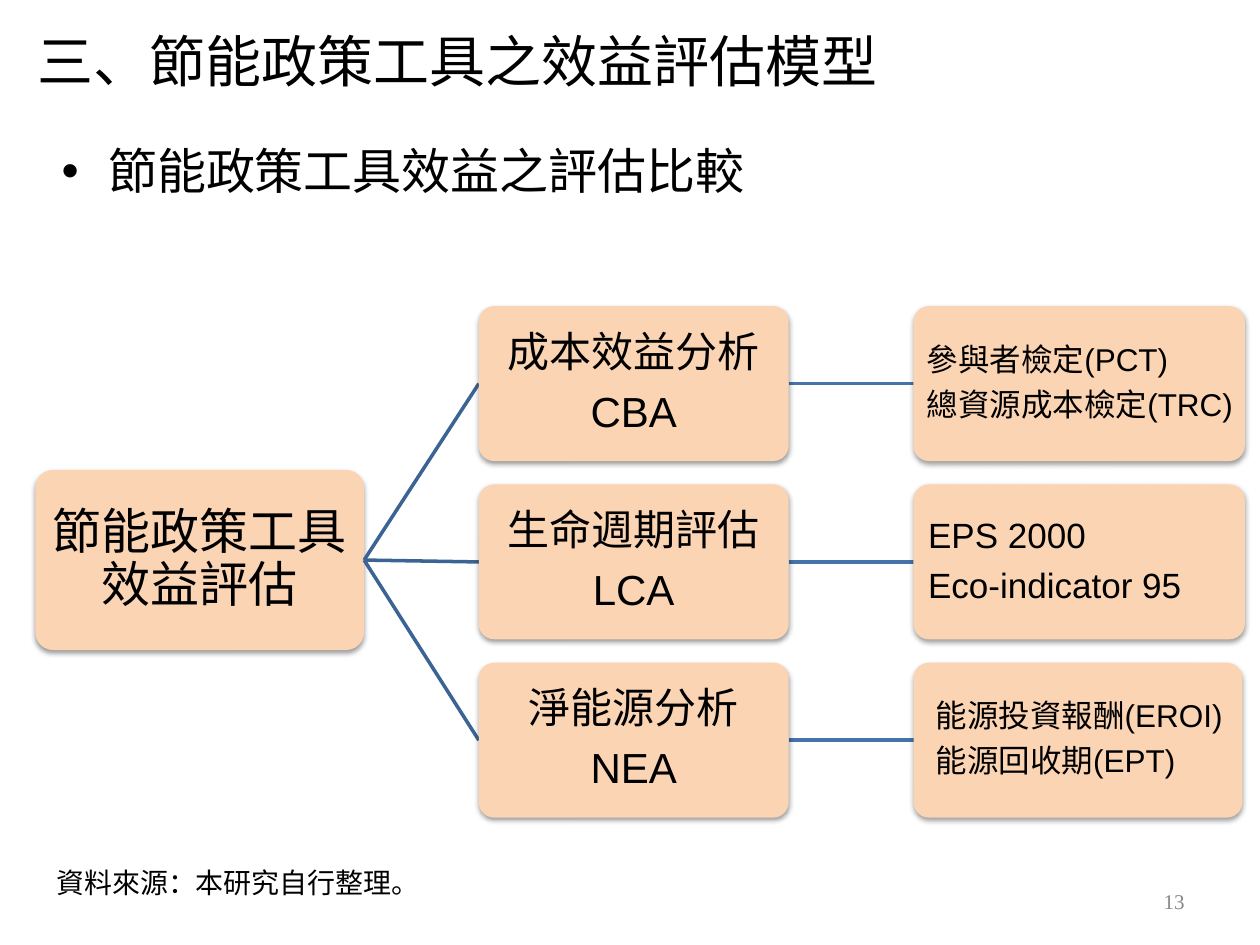
from lxml.etree import SubElement
from pptx import Presentation
from pptx.dml.color import RGBColor
from pptx.enum.shapes import MSO_CONNECTOR, MSO_SHAPE
from pptx.enum.text import MSO_ANCHOR, PP_ALIGN
from pptx.oxml.ns import qn
from pptx.util import Inches, Pt

BLACK = RGBColor(0, 0, 0)
GRAY = RGBColor(0x88, 0x88, 0x88)
PEACH = RGBColor(0xFB, 0xD4, 0xB4)
NAVY = RGBColor(0x3B, 0x64, 0x95)
BLUE = RGBColor(0x46, 0x74, 0xAA)

TITLE = "三、節能政策工具之效益評估模型"
POINT = "節能政策工具效益之評估比較"
ROOT = "節能政策工具效益評估"
SOURCE = "資料來源：本研究自行整理。"
NUMBER = "13"
# method lines, tool lines, tool text size, tool indent, tool box width
ROWS = [
    (["成本效益分析", "CBA"], ["參與者檢定(PCT)", "總資源成本檢定(TRC)"], 18, 0.07, 2.63),
    (["生命週期評估", "LCA"], ["EPS 2000", "Eco-indicator 95"], 20, 0.08, 2.63),
    (["淨能源分析", "NEA"], ["能源投資報酬(EROI)", "能源回收期(EPT)"], 18, 0.14, 2.61),
]
ROOT_BOX = (0.28, 3.73, 2.61, 1.43)
METHOD_X, METHOD_W, TOOL_X = 3.8, 2.46, 7.25
TOP, HIGH, STEP = 2.43, 1.23, 1.415

deck = Presentation()
deck.slide_width, deck.slide_height = Inches(10), Inches(7.5)
slide = deck.slides.add_slide(deck.slide_layouts[6])
shapes = slide.shapes


def write(shape, lines, size, face="Arial", color=BLACK, align=PP_ALIGN.LEFT,
          anchor=MSO_ANCHOR.MIDDLE, pad=(0.1, 0.05, 0.1, 0.05), tight=False, bullet=False):
    frame = shape.text_frame
    frame.word_wrap = True
    frame.vertical_anchor = anchor
    for side, gap in zip(("left", "top", "right", "bottom"), pad):
        setattr(frame, "margin_" + side, Inches(gap))
    frame.text = "\n".join(lines)
    for i, para in enumerate(frame.paragraphs):
        para.alignment = align
        if tight:
            para.line_spacing = 0.9
            if i:
                para.space_before = Pt(size * 0.35)
        if bullet:
            props = para._p.get_or_add_pPr()
            props.set("marL", str(Inches(0.37)))
            props.set("indent", str(-Inches(0.37)))
            SubElement(props, qn("a:buFont"), typeface="Arial")
            SubElement(props, qn("a:buChar"), char="•")
        for run in para.runs:
            for key, value in {"size": Pt(size), "name": face}.items():
                setattr(run.font, key, value)
            run.font.color.rgb = color


def label(box, text, size, **look):
    write(shapes.add_textbox(*map(Inches, box)), [text], size, **look)


def card(box, lines, size, **look):
    shape = shapes.add_shape(MSO_SHAPE.ROUNDED_RECTANGLE, *map(Inches, box))
    shape.adjustments[0] = 0.1
    shape.fill.solid()
    shape.fill.fore_color.rgb = PEACH
    shape.line.fill.background()
    shape.shadow.inherit = False
    effects = shape._element.spPr.find(qn("a:effectLst"))
    shade = SubElement(effects, qn("a:outerShdw"), blurRad=str(Pt(3.1)),
                       dist=str(Pt(1.6)), dir="5400000", rotWithShape="0")
    tone = SubElement(shade, qn("a:srgbClr"), val="000000")
    SubElement(tone, qn("a:alpha"), val="38000")
    write(shape, lines, size, tight=True, **look)


def link(x1, y1, x2, y2, color):
    line = shapes.add_connector(MSO_CONNECTOR.STRAIGHT, *map(Inches, (x1, y1, x2, y2)))
    line.line.color.rgb = color
    line.line.width = Pt(2)
    SubElement(line._element.spPr, qn("a:effectLst"))


label((0.2, 0.05, 9.61, 0.86), TITLE, 32, face="Times New Roman")
label((0.39, 1.07, 9.25, 0.7), POINT, 28, anchor=MSO_ANCHOR.TOP, bullet=True)
label((0.35, 6.82, 3.86, 0.37), SOURCE, 16, anchor=MSO_ANCHOR.TOP)
label((7.17, 6.95, 2.33, 0.4), NUMBER, 12, face="Times New Roman",
      color=GRAY, align=PP_ALIGN.RIGHT)

x, y, w, h = ROOT_BOX
card(ROOT_BOX, [ROOT], 28, align=PP_ALIGN.CENTER, pad=(0.02,) * 4)
for i, (method, tools, size, indent, wide) in enumerate(ROWS):
    top = TOP + i * STEP
    mid = top + HIGH / 2
    link(x + w, y + h / 2, METHOD_X, mid, NAVY)
    link(METHOD_X + METHOD_W, mid, TOOL_X, mid, BLUE)
    card((METHOD_X, top, METHOD_W, HIGH), method, 24,
         align=PP_ALIGN.CENTER, pad=(0.02,) * 4)
    card((TOOL_X, top, wide, HIGH), tools, size, pad=(indent, 0.01, 0.01, 0.01))

deck.save("out.pptx")
